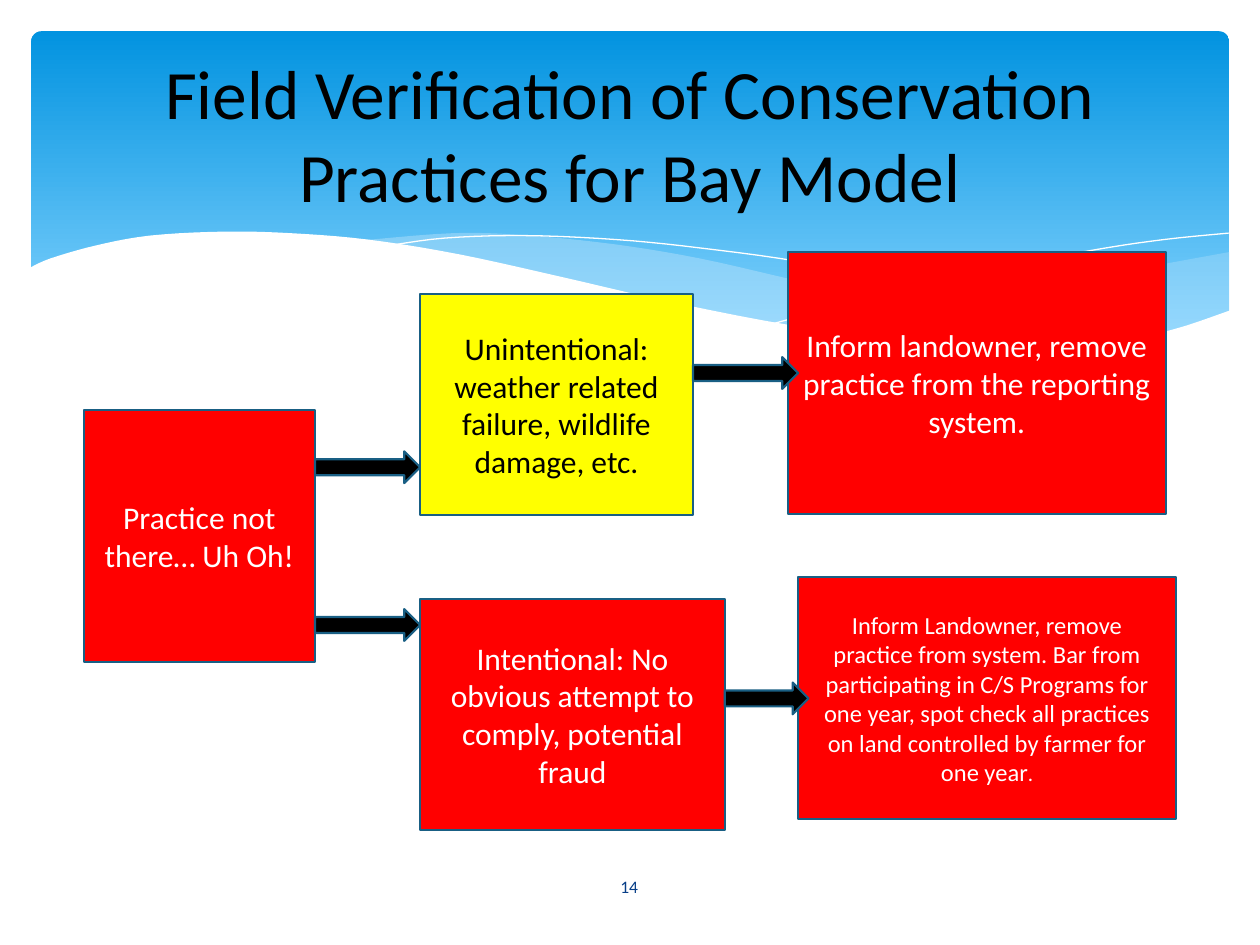
"""Build the field verification flow slide with its wave banner."""
from dataclasses import dataclass
from itertools import pairwise

from lxml import etree
from pptx import Presentation
from pptx import util as u
from pptx.dml.color import RGBColor
from pptx.enum import shapes, text
from pptx.oxml.ns import qn

COLORS = {
    "red": "FF0000", "yellow": "FFFF00", "black": "000000", "white": "FFFFFF",
    "edge": "195F84", "sky": "0293E0", "pale": "83D3FE", "foam": "C6E7FC",
    "number": "073E87",
}
FONT = "Calibri"
Point = tuple[float, float]


@dataclass
class Box:
    left: float
    top: float
    width: float
    height: float
    label: str
    fill: str = "red"
    ink: str = "white"
    size: float = 18
    tail: str = ""


@dataclass
class Arrow:
    left: float
    top: float
    width: float
    height: float = 0.64


@dataclass
class Wave:
    edges: list[list[Point]]
    fill: str = ""
    opacity: int = 100


SWELLS = [
    Wave([
        [(24.79, 5.08), (23.01, 5.41), (21.87, 5.66), (19.13, 6.3), (16.79, 6.73)],
        [(16.79, 6.73), (18.26, 6.91), (19.53, 7.04), (20.68, 7.06), (21.92, 6.99),
         (22.99, 6.83), (23.93, 6.58), (24.79, 6.27)],
    ], "foam", 29),
    Wave([
        [(22.68, 6.93), (20.5, 6.6), (17.93, 6.1), (15.98, 5.64), (14.1, 5.21),
         (12.42, 4.93), (10.67, 4.75), (9.17, 4.7), (7.26, 4.85)],
        [(7.26, 4.85), (8.69, 5.05), (10.26, 5.36), (11.4, 5.64), (13.46, 6.1),
         (15.27, 6.48), (16.89, 6.76), (18.69, 6.99), (20.22, 7.06),
         (21.54, 7.04), (22.68, 6.93)],
    ], "foam", 40),
    Wave([[(7.85, 4.95), (8.97, 4.8), (10.57, 4.75), (12.42, 4.83), (14.12, 5),
           (16.15, 5.28), (18.47, 5.74), (21.11, 6.38), (23.04, 6.91)]]),
    Wave([[(15.57, 6.53), (17.65, 5.97), (19.71, 5.49), (22, 5.05),
           (23.47, 4.83), (24.77, 4.7)]]),
    Wave([
        [(24.82, 6.25), (23.62, 6.65), (22.23, 6.93), (20.55, 7.04), (18.44, 6.91),
         (15.9, 6.55), (13.44, 6.07), (11.35, 5.59), (9.27, 5.13), (7.42, 4.83),
         (5.84, 4.7), (4.5, 4.67), (3.02, 4.75), (1.93, 4.95), (1.02, 5.21),
         (0.58, 5.41)],
        [(0.58, 8.36), (24.82, 8.36)],
    ], "white"),
]

TITLE = Box(1.27, 0.94, 22.86, 3.48,
            "Field Verification of Conservation Practices for Bay Model",
            ink="black", size=39.6)
NUMBER = Box(11.07, 17.37, 3.23, 1.02, "14", ink="number", size=10)

BOXES = [
    Box(1.69, 8.26, 4.66, 5.08, "Practice not there… Uh Oh!"),
    Box(8.47, 5.93, 5.5, 4.45,
        "Unintentional: weather related failure, wildlife damage, etc.",
        fill="yellow", ink="black"),
    Box(8.47, 12.07, 6.14, 4.66,
        "Intentional: No obvious attempt to comply, potential fraud"),
    Box(15.88, 5.08, 7.62, 5.29,
        "Inform landowner, remove practice from the reporting system."),
    Box(16.09, 11.64, 7.62, 4.87,
        "Inform Landowner, remove practice from system. Bar from participating "
        "in C/S Programs for one year, spot check all practices on land "
        "controlled by farmer for one year", size=14, tail="."),
]
ARROWS = [Arrow(6.35, 9.1, 2.12), Arrow(6.35, 12.28, 2.12),
          Arrow(13.97, 7.2, 2.12), Arrow(14.61, 13.76, 1.69)]


def rgb(name: str) -> RGBColor:
    """Look up a named colour."""
    return RGBColor.from_string(COLORS[name])


def frame(item: Box | Arrow) -> list[int]:
    """Return the position and size of an item as lengths."""
    return [u.Cm(v) for v in (item.left, item.top, item.width, item.height)]


def spline(points: list[Point], steps: int = 5) -> list[Point]:
    """Smooth a run of points with a Catmull-Rom curve."""
    if len(points) < 3:
        return points
    ends = [points[0], *points, points[-1]]
    curve = [points[0]]
    for i, (b, c) in enumerate(pairwise(points)):
        a, d = ends[i], ends[i + 3]
        for t in (n / steps for n in range(1, steps + 1)):
            curve.append(tuple(
                b[k] + t / 2 * (c[k] - a[k]
                                + t * (2 * a[k] - 5 * b[k] + 4 * c[k] - d[k])
                                + t * t * (3 * b[k] - a[k] - 3 * c[k] + d[k]))
                for k in (0, 1)))
    return curve


def write(tf, content: str, *, size: float, color: str, tail: str = "") -> None:
    """Write centred text, with an optional smaller tail."""
    tf.word_wrap = True
    tf.vertical_anchor = text.MSO_ANCHOR.MIDDLE
    p = tf.paragraphs[0]
    p.alignment = text.PP_ALIGN.CENTER
    for part, points in ((content, size), (tail, 12)):
        if part:
            r = p.add_run()
            r.text = part
            r.font.name = FONT
            r.font.size = u.Pt(points)
            r.font.color.rgb = rgb(color)


def add_solid(slide, kind: shapes.MSO_SHAPE, item: Box | Arrow, fill: str):
    """Add a filled preset shape with the common outline."""
    sp = slide.shapes.add_shape(kind, *frame(item))
    sp.shadow.inherit = False
    sp.fill.solid()
    sp.fill.fore_color.rgb = rgb(fill)
    sp.line.color.rgb = rgb("edge")
    sp.line.width = u.Pt(1.25)
    return sp


def add_text(slide, box: Box) -> None:
    """Add a plain text box."""
    sp = slide.shapes.add_textbox(*frame(box))
    write(sp.text_frame, box.label, size=box.size, color=box.ink)


def add_wave(slide, wave: Wave) -> None:
    """Add a filled swell, or a thin white crest when it has no fill."""
    points = [(u.Cm(x), u.Cm(y)) for edge in wave.edges for x, y in spline(edge)]
    builder = slide.shapes.build_freeform(*points[0])
    builder.add_line_segments(points[1:], close=bool(wave.fill))
    sp = builder.convert_to_shape()
    sp.shadow.inherit = False
    if not wave.fill:
        sp.fill.background()
        sp.line.color.rgb = rgb("white")
        sp.line.width = u.Pt(0)
        return
    sp.line.fill.background()
    sp.fill.solid()
    sp.fill.fore_color.rgb = rgb(wave.fill)
    if wave.opacity < 100:
        color = sp.fill._xPr.find(qn("a:solidFill"))[0]
        etree.SubElement(color, qn("a:alpha"), val=str(wave.opacity * 1000))


def add_banner(slide) -> None:
    """Add the rounded gradient banner and its waves."""
    sp = slide.shapes.add_shape(shapes.MSO_SHAPE.ROUNDED_RECTANGLE,
                                u.Cm(0.63), u.Cm(0.63), u.Cm(24.15), u.Cm(6.86))
    sp.adjustments[0] = 0.03
    sp.shadow.inherit = False
    sp.line.fill.background()
    sp.fill.gradient()
    sp.fill.gradient_angle = 270
    for stop, name, place in zip(sp.fill.gradient_stops, ("sky", "pale"), (0, 0.9)):
        stop.color.rgb = rgb(name)
        stop.position = place
    for wave in SWELLS:
        add_wave(slide, wave)


def main() -> None:
    """Draw the slide and save it."""
    prs = Presentation()
    prs.slide_width, prs.slide_height = u.Cm(25.4), u.Cm(19.05)
    s = prs.slides.add_slide(prs.slide_layouts[6])
    add_banner(s)
    add_text(s, TITLE)
    for box in BOXES:
        sp = add_solid(s, shapes.MSO_SHAPE.RECTANGLE, box, box.fill)
        write(sp.text_frame, box.label, size=box.size, color=box.ink, tail=box.tail)
    for arrow in ARROWS:
        add_solid(s, shapes.MSO_SHAPE.RIGHT_ARROW, arrow, "black")
    add_text(s, NUMBER)
    prs.save("out.pptx")


if __name__ == "__main__":
    main()
